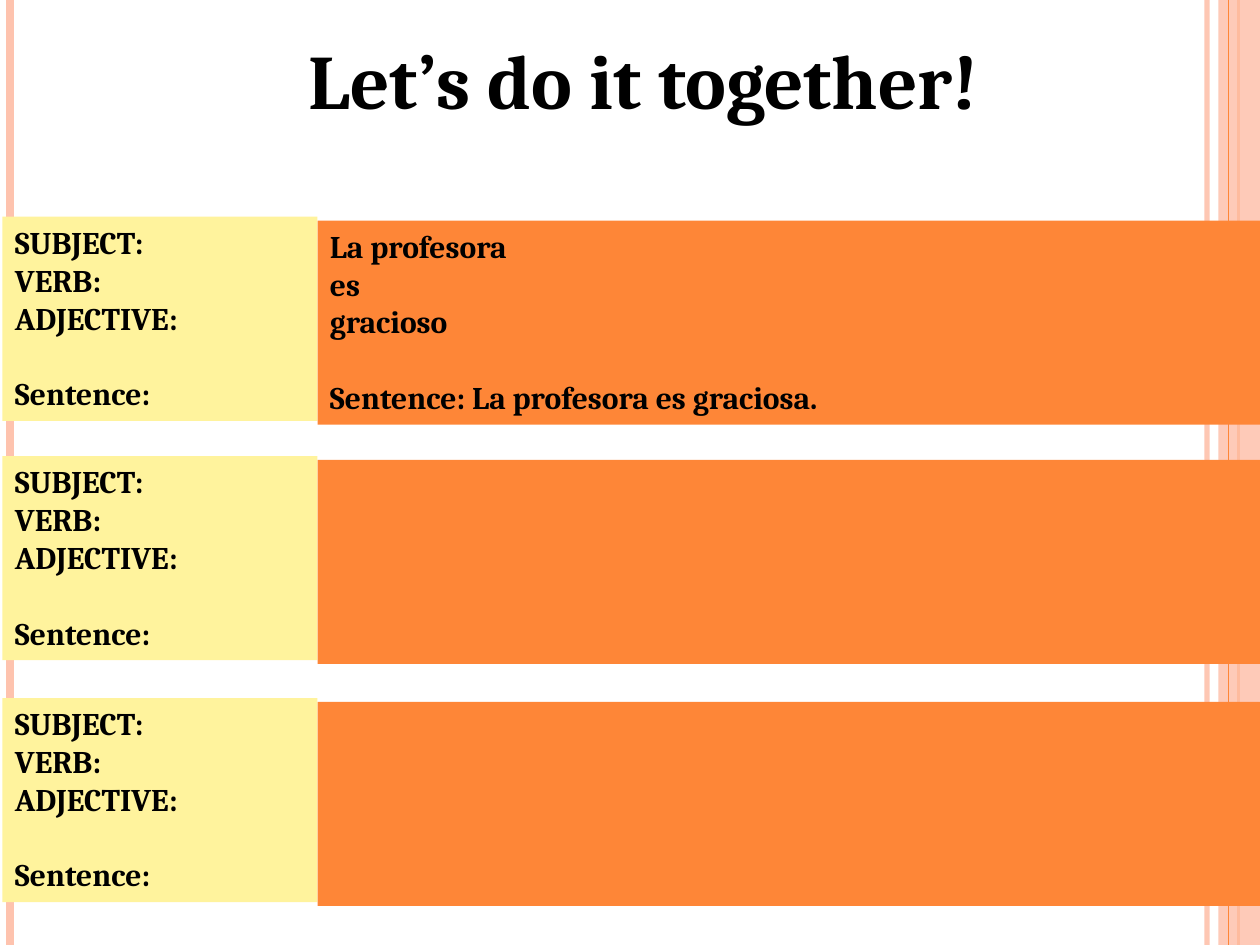
from lxml import etree
from pptx import Presentation
from pptx.dml.color import RGBColor
from pptx.enum.shapes import MSO_CONNECTOR, MSO_SHAPE
from pptx.enum.text import MSO_ANCHOR, PP_ALIGN
from pptx.oxml.ns import qn
from pptx.util import Inches, Pt

BLACK = RGBColor(0x00, 0x00, 0x00)
ORANGE = RGBColor(0xFE, 0x86, 0x37)
PEACH = RGBColor(0xFE, 0xC3, 0xAE)
YELLOW = RGBColor(0xFF, 0xF3, 0x9D)

SLIDE_WIDTH, SLIDE_HEIGHT = 10, 7.5
LABEL_LEFT, LABEL_WIDTH = 0.02, 2.5
ANSWER_LEFT = LABEL_LEFT + LABEL_WIDTH
BOX_HEIGHT = 1.62
ANSWER_DROP = 0.03

LABELS = ["SUBJECT:", "VERB:", "ADJECTIVE:", "Sentence:"]
EXERCISES = [
    (1.72, ["La profesora", "es", "gracioso", "Sentence: La profesora es graciosa."]),
    (3.62, []),
    (5.54, []),
]


def set_opacity(fill, percent):
    color = fill._xPr.find(qn("a:solidFill"))[0]
    etree.SubElement(color, qn("a:alpha"), val=str(percent * 1000))


def add_block(left, top, width, height, color, lines=()):
    """Add a filled rectangle; its last line stands one line apart."""
    block = slide.shapes.add_shape(
        MSO_SHAPE.RECTANGLE, Inches(left), Inches(top), Inches(width), Inches(height))
    block.shadow.inherit = False
    block.fill.solid()
    block.fill.fore_color.rgb = color
    block.line.fill.background()
    frame = block.text_frame
    frame.word_wrap = True
    frame.vertical_anchor = MSO_ANCHOR.TOP
    for index, line in enumerate(lines):
        paragraph = frame.paragraphs[0] if index == 0 else frame.add_paragraph()
        paragraph.text = line
        paragraph.alignment = PP_ALIGN.LEFT
        if index == len(lines) - 1:
            paragraph.space_before = Pt(21.6)
        for name, value in {"name": "Cambria", "size": Pt(18), "bold": True}.items():
            setattr(paragraph.font, name, value)
        paragraph.font.color.rgb = BLACK
    return block


presentation = Presentation()
presentation.slide_width = Inches(SLIDE_WIDTH)
presentation.slide_height = Inches(SLIDE_HEIGHT)
slide = presentation.slides.add_slide(presentation.slide_layouts[5])

# Title
title = slide.shapes.title
title_place = {"left": 0.22, "top": 0.21, "width": 9.78, "height": 0.84}
for name, value in title_place.items():
    setattr(title, name, Inches(value))
title.text_frame.text = "Let’s do it together!"
title.text_frame.vertical_anchor = MSO_ANCHOR.TOP
heading = title.text_frame.paragraphs[0]
heading.alignment = PP_ALIGN.CENTER
for name, value in {"name": "Cambria", "size": Pt(44), "bold": True}.items():
    setattr(heading.font, name, value)
heading.font.color.rgb = BLACK

# Vertical stripes; the band covers those listed before it
for x, color, weight, opacity in [
    (9.58, PEACH, 3, 93),
    (0.08, PEACH, 4.5, 100),
    (9.83, ORANGE, 1.5, 100),
    (None, PEACH, None, 87),
    (9.75, ORANGE, 0.75, 100),
]:
    if x is None:
        band = add_block(9.67, 0, 0.33, SLIDE_HEIGHT, color)
        set_opacity(band.fill, opacity)
        continue
    stripe = slide.shapes.add_connector(
        MSO_CONNECTOR.STRAIGHT, Inches(x), 0, Inches(x), Inches(SLIDE_HEIGHT))
    stripe.line.color.rgb = color
    stripe.line.width = Pt(weight)
    if opacity < 100:
        set_opacity(stripe.line.fill, opacity)
    etree.SubElement(stripe._element.spPr, qn("a:effectLst"))

# Exercises: labels on the left, answers on the right
for top, answers in EXERCISES:
    add_block(LABEL_LEFT, top, LABEL_WIDTH, BOX_HEIGHT, YELLOW, LABELS)
    add_block(ANSWER_LEFT, top + ANSWER_DROP, SLIDE_WIDTH - ANSWER_LEFT,
              BOX_HEIGHT, ORANGE, answers)

presentation.save("out.pptx")
